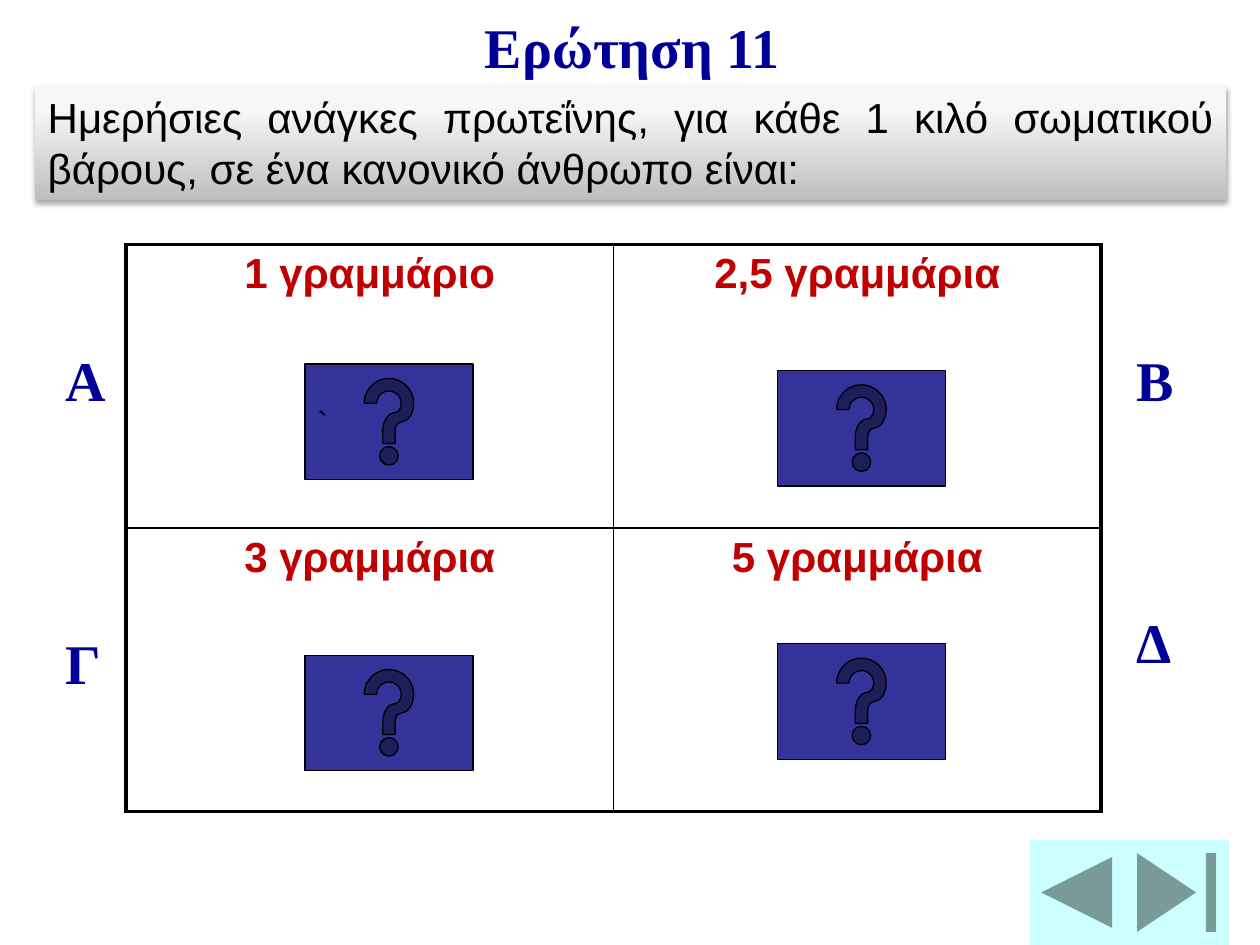
"""Build the quiz slide for question 11."""
from lxml import etree
from pptx import Presentation
from pptx.dml.color import RGBColor
from pptx.enum import shapes, text
from pptx.oxml import parse_xml
from pptx.oxml.ns import qn
from pptx.util import Pt

TITLE = "Ερώτηση 11"
QUESTION = ("Ημερήσιες ανάγκες πρωτεΐνης, για κάθε 1 κιλό σωματικού βάρους, "
            "σε ένα κανονικό άνθρωπο είναι:")
ANSWERS = [["1 γραμμάριο", "2,5 γραμμάρια"],
           ["3 γραμμάρια", "5 γραμμάρια"]]
LABELS = [("Α", 30.24, 193.68), ("Γ", 30.24, 355.68),
          ("Β", 642.24, 193.68), ("Δ", 642.24, 343.44)]
HELP_BUTTONS = [(174.24, 208.08, "`"), (444.24, 367.92, ""),
                (444.24, 211.68, ""), (174.24, 374.4, "")]
NAV_BUTTONS = [("ACTION_BUTTON_END", 642.24, 60),
               ("ACTION_BUTTON_BACK_OR_PREVIOUS", 588.24, 54)]
GRADIENT = [(0, "BEBEBE"), (80, "F7F7F7"), (100, "F8F8F8")]
NAVY, RED, BLACK, WHITE = "000099", "C00000", "000000", "FFFFFF"
NS = 'xmlns:a="http://schemas.openxmlformats.org/drawingml/2006/main"'
ALIGN = text.PP_ALIGN


def rgb(value):
    """Return a colour from its hex string."""
    return RGBColor.from_string(value)


def write(tf, words, size, font, color, bold=False, align=ALIGN.LEFT):
    """Put one formatted paragraph in a text frame."""
    p = tf.paragraphs[0]
    p.text, p.alignment = words, align
    p.font.size, p.font.name, p.font.bold = Pt(size), font, bold
    p.font.color.rgb = rgb(color)


def add_heading(s, words, left, top, width):
    """Add a large serif text box."""
    tf = s.shapes.add_textbox(Pt(left), Pt(top), Pt(width), Pt(46)).text_frame
    tf.word_wrap = True
    write(tf, words, 32, "Times New Roman", NAVY, True)


def add_button(s, kind, left, top, width, height, fill, line=None):
    """Add an action button and return it."""
    sp = s.shapes.add_shape(getattr(shapes.MSO_SHAPE, kind),
                            Pt(left), Pt(top), Pt(width), Pt(height))
    sp.shadow.inherit = False
    sp.fill.solid()
    sp.fill.fore_color.rgb = rgb(fill)
    if line:
        sp.line.color.rgb = rgb(line)
        sp.line.width = Pt(0.75)
    else:
        sp.line.fill.background()
    return sp


def add_answers(s):
    """Add the answer table with a heavy frame and thin inner lines."""
    table = s.shapes.add_table(2, 2, Pt(72), Pt(139.68), Pt(557.28), Pt(324)).table
    for r, row in enumerate(ANSWERS):
        for c, answer in enumerate(row):
            cell = table.cell(r, c)
            write(cell.text_frame, answer, 24, "Arial", RED, True, ALIGN.CENTER)
            tc_pr = cell._tc.get_or_add_tcPr()
            outer = {"lnL": c == 0, "lnR": c == 1, "lnT": r == 0, "lnB": r == 1}
            for side, heavy in outer.items():
                ln = etree.SubElement(tc_pr, qn(f"a:{side}"),
                                      w=str(Pt(2.25 if heavy else 1)))
                fill = etree.SubElement(ln, qn("a:solidFill"))
                etree.SubElement(fill, qn("a:srgbClr"), val=BLACK)
            cell.fill.solid()
            cell.fill.fore_color.rgb = rgb(WHITE)


def add_question(s):
    """Add the shaded question panel with its soft shadow."""
    sp = s.shapes.add_shape(shapes.MSO_SHAPE.RECTANGLE,
                            Pt(20.16), Pt(48.96), Pt(680.4), Pt(65.5))
    sp.line.fill.background()
    stops = "".join(f'<a:gs pos="{pos * 1000}"><a:srgbClr val="{color}"/></a:gs>'
                    for pos, color in GRADIENT)
    ln = sp._element.spPr.find(qn("a:ln"))
    ln.addprevious(parse_xml(f'<a:gradFill {NS} rotWithShape="1"><a:gsLst>{stops}'
                             '</a:gsLst><a:lin ang="16200000" scaled="0"/></a:gradFill>'))
    ln.addnext(parse_xml(
        f'<a:effectLst {NS}><a:outerShdw blurRad="{Pt(3.1)}" dist="{Pt(1.8)}" '
        f'dir="5400000" rotWithShape="0"><a:srgbClr val="{BLACK}">'
        '<a:alpha val="35000"/></a:srgbClr></a:outerShdw></a:effectLst>'))
    tf = sp.text_frame
    tf.word_wrap = True
    tf.vertical_anchor = text.MSO_ANCHOR.TOP
    write(tf, QUESTION, 24, "Arial", BLACK, align=ALIGN.JUSTIFY)


def main():
    """Assemble and save the slide."""
    prs = Presentation()
    prs.slide_width, prs.slide_height = Pt(720), Pt(540)
    s = prs.slides.add_slide(prs.slide_layouts[6])
    add_answers(s)
    for letter, left, top in LABELS:
        add_heading(s, letter, left, top, 36)
    add_heading(s, TITLE, 270, 3.6, 192.24)
    for left, top, words in HELP_BUTTONS:
        sp = add_button(s, "ACTION_BUTTON_HELP", left, top, 96, 66, "333399", BLACK)
        if words:
            sp.text_frame.word_wrap = False
            write(sp.text_frame, words, 18, "Arial", BLACK)
    for kind, left, width in NAV_BUTTONS:
        add_button(s, kind, left, 480, width, 60, "CCFFFF")
    add_question(s)
    prs.save("out.pptx")


if __name__ == "__main__":
    main()
